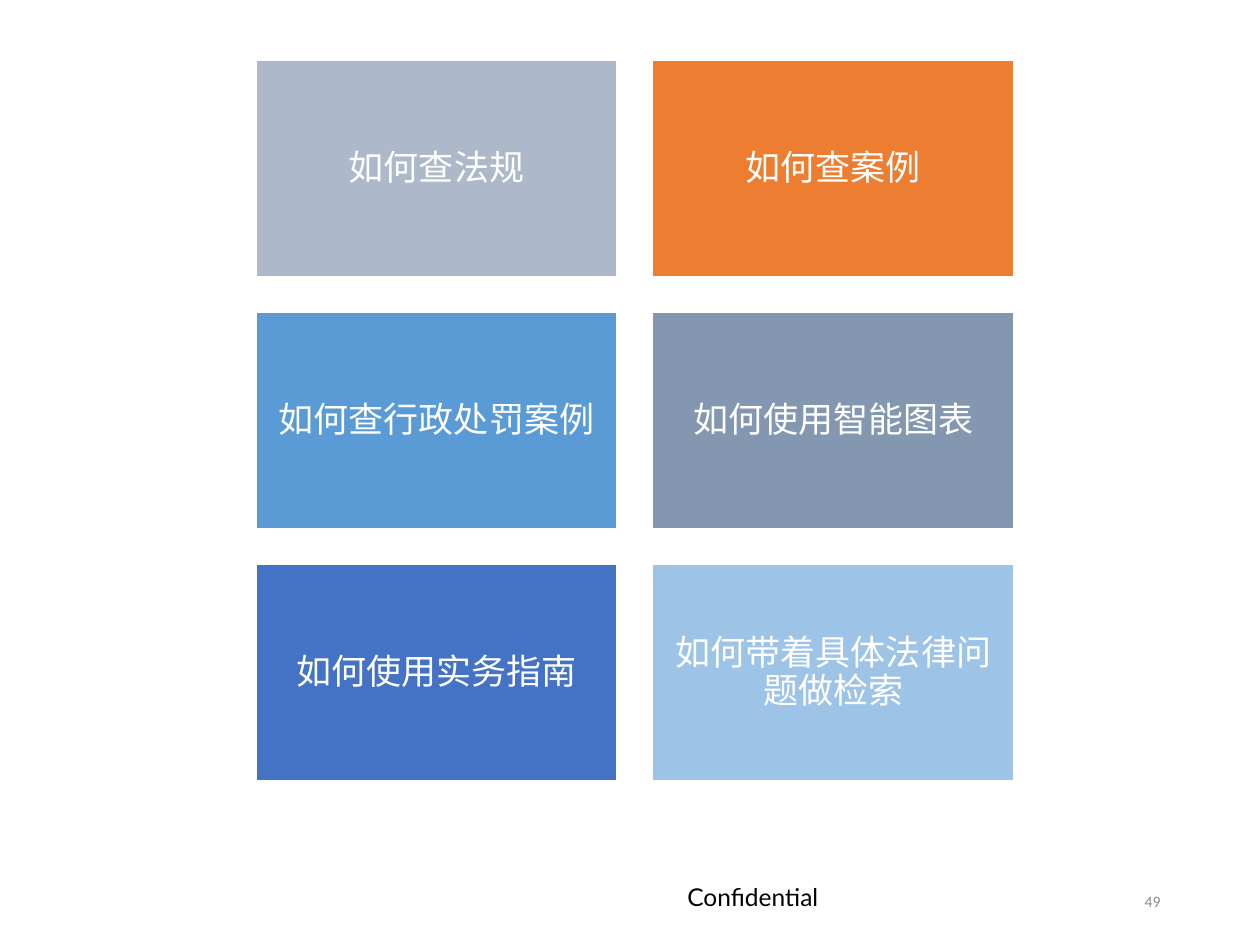
import pptx
import pptx.dml.color
import pptx.enum.shapes
import pptx.enum.text
import pptx.util

Inches = pptx.util.Inches
Pt = pptx.util.Pt
Align = pptx.enum.text.PP_ALIGN

TOPICS = [
    ("如何查法规", "ADB9CA"),
    ("如何查案例", "ED7D31"),
    ("如何查行政处罚案例", "5B9BD5"),
    ("如何使用智能图表", "8497B0"),
    ("如何使用实务指南", "4472C4"),
    ("如何带着具体法律问题做检索", "9DC3E6"),
]
COLUMNS = 2
LEFT, TOP = 2.03, 0.48
TILE_WIDTH, TILE_HEIGHT = 2.87, 1.72
GAP = 0.28


def color(value):
    return pptx.dml.color.RGBColor.from_string(value)


def write(box, text, *, size, fill, font="Calibri", align=Align.CENTER,
          inset=None, line_spacing=None):
    frame = box.text_frame
    frame.word_wrap = True
    frame.vertical_anchor = pptx.enum.text.MSO_ANCHOR.MIDDLE
    if inset is not None:
        frame.margin_left = frame.margin_right = Inches(inset)
        frame.margin_top = frame.margin_bottom = Inches(inset)
    para = frame.paragraphs[0]
    para.alignment = align
    if line_spacing is not None:
        para.line_spacing = line_spacing
    span = para.add_run()
    span.text = text
    span.font.name = font
    span.font.size = Pt(size)
    span.font.color.rgb = color(fill)


def add_tile(page, index, text, fill):
    row, column = divmod(index, COLUMNS)
    tile = page.shapes.add_shape(
        pptx.enum.shapes.MSO_SHAPE.RECTANGLE,
        Inches(LEFT + column * (TILE_WIDTH + GAP)),
        Inches(TOP + row * (TILE_HEIGHT + GAP)),
        Inches(TILE_WIDTH), Inches(TILE_HEIGHT))
    tile.shadow.inherit = False
    tile.fill.solid()
    tile.fill.fore_color.rgb = color(fill)
    tile.line.color.rgb = color("FFFFFF")
    tile.line.width = Pt(1)
    write(tile, text, size=20, fill="FFFFFF", inset=0.08, line_spacing=0.9)


def add_label(page, text, left, top, width, height, **style):
    box = page.shapes.add_textbox(
        Inches(left), Inches(top), Inches(width), Inches(height))
    write(box, text, **style)


def main():
    deck = pptx.Presentation()
    deck.slide_width, deck.slide_height = Inches(10), Inches(7.5)
    page = deck.slides.add_slide(deck.slide_layouts[6])
    add_label(page, "Confidential", 5.1, 6.95, 1.75, 0.34,
              size=14, fill="000000", font="Lato")
    add_label(page, "49", 7.06, 6.95, 2.25, 0.4,
              size=9, fill="8C8C8C", align=Align.RIGHT)
    for index, (text, fill) in enumerate(TOPICS):
        add_tile(page, index, text, fill)
    deck.save("out.pptx")


if __name__ == "__main__":
    main()
